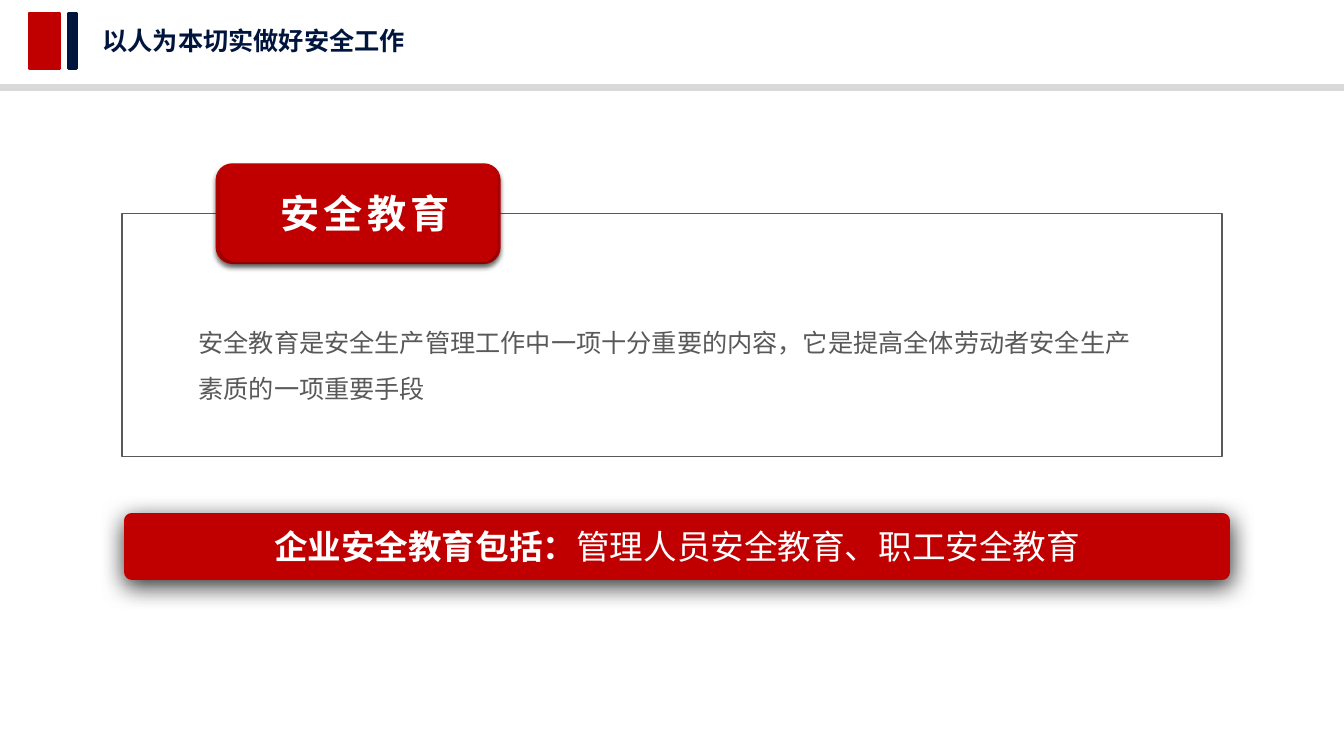
from lxml import etree
from pptx import Presentation
from pptx.dml.color import RGBColor
from pptx.enum.shapes import MSO_SHAPE
from pptx.enum.text import MSO_ANCHOR, PP_ALIGN
from pptx.oxml.ns import qn
from pptx.util import Emu, Pt

RECTANGLE = MSO_SHAPE.RECTANGLE
ROUNDED = MSO_SHAPE.ROUNDED_RECTANGLE
MIDDLE = MSO_ANCHOR.MIDDLE
CENTER = PP_ALIGN.CENTER
FONT = "Noto Sans CJK SC"
RED, NAVY, GRAY, SILVER, WHITE = "C00000", "00153E", "595959", "D9D9D9", "FFFFFF"
WIDTH, HEIGHT = 1334, 750


def px(length):
    """Turn px, at 100 to the inch, into EMU."""
    return Emu(length * 9144)


def color(value):
    """Turn a hex string into a colour."""
    return RGBColor.from_string(value)


def add_block(shapes, box, fill=None, line=None, line_width=1.5, kind=RECTANGLE):
    """Add a preset shape without a shadow."""
    block = shapes.add_shape(kind, *map(px, box))
    block.shadow.inherit = False
    if fill:
        block.fill.solid()
        block.fill.fore_color.rgb = color(fill)
    else:
        block.fill.background()
    if line:
        block.line.color.rgb = color(line)
        block.line.width = Pt(line_width)
    else:
        block.line.fill.background()
    return block


def add_shadow(block, opacity, blur, distance):
    """Cast a black shadow straight down, with lengths in points."""
    effects = block._element.spPr.find(qn("a:effectLst"))
    shadow = etree.SubElement(effects, qn("a:outerShdw"), blurRad=str(Pt(blur)),
                              dist=str(Pt(distance)), dir="5400000", algn="t", rotWithShape="0")
    black = etree.SubElement(shadow, qn("a:srgbClr"), val="000000")
    etree.SubElement(black, qn("a:alpha"), val=str(opacity * 1000))


def add_span(para, text, size, text_color, bold=False, spacing=None):
    """Add a formatted run to a paragraph."""
    span = para.add_run()
    span.text = text
    span.font.name = FONT
    span.font.size = Pt(size)
    span.font.bold = bold
    span.font.color.rgb = color(text_color)
    properties = span._r.get_or_add_rPr()
    etree.SubElement(properties, qn("a:ea"), typeface=FONT)
    if spacing:
        properties.set("spc", str(spacing * 100))


def add_header(page, left, top, width, height):
    """Draw the two marks, the title and the rule below them."""
    for offset, mark_width, fill in ((29, 31, RED), (68, 8, NAVY)):
        add_block(page.shapes, (left + offset, top + 13, mark_width, 55), fill, fill)
    title = page.shapes.add_textbox(*map(px, (left + 92, top + 20, 323, 40)))
    title.text_frame.word_wrap = False
    add_span(title.text_frame.paragraphs[0], "以人为本切实做好安全工作", 18, NAVY, True)
    add_block(page.shapes, (left, top + height - 5, width, 5), SILVER, SILVER)


def add_tab(page, left, top, width, height):
    """Draw the raised label as two stacked rounded plates."""
    tab = page.shapes.add_group_shape()
    base = add_block(tab.shapes, (left, top, width, height), RED, kind=ROUNDED)
    add_shadow(base, 50, 3.5, 2.2)
    face = add_block(tab.shapes, (left + 4, top + 1, width - 7, height - 3), RED, kind=ROUNDED)
    add_shadow(face, 32, 3.5, 2.2)
    frame = face.text_frame
    frame.vertical_anchor = MIDDLE
    frame.paragraphs[0].alignment = CENTER
    add_span(frame.paragraphs[0], " 安全教育", 28, WHITE, True, 3)


def add_panel(page, left, top, width, height):
    """Draw the outlined panel with its text and label."""
    add_block(page.shapes, (left, top, width, height), line=GRAY, line_width=1)
    body = page.shapes.add_textbox(*map(px, (left + 63, top + 91, width - 120, 104)))
    frame = body.text_frame
    frame.word_wrap = True
    frame.margin_left = frame.margin_right = px(13)
    frame.margin_top = frame.margin_bottom = px(7)
    frame.paragraphs[0].line_spacing = 1.5
    add_span(frame.paragraphs[0],
             "安全教育是安全生产管理工作中一项十分重要的内容，它是提高全体劳动者安全生产素质的一项重要手段",
             18, GRAY)
    add_tab(page, left + 93, top - 50, 283, 100)


def add_summary(page, left, top, width, height):
    """Draw the red bar that lists the kinds of education."""
    bar = add_block(page.shapes, (left, top, width, height), RED, RED, 12)
    add_shadow(bar, 80, 17, 4)
    frame = bar.text_frame
    frame.word_wrap = True
    frame.vertical_anchor = MIDDLE
    para = frame.paragraphs[0]
    para.alignment = CENTER
    add_span(para, "企业安全教育包括：", 24, WHITE, True)
    add_span(para, "管理人员安全教育、职工安全教育", 24, WHITE)


def main():
    """Build and save the deck."""
    deck = Presentation()
    deck.slide_width, deck.slide_height = px(WIDTH), px(HEIGHT)
    page = deck.slides.add_slide(deck.slide_layouts[6])
    add_header(page, 0, 0, WIDTH, 89)
    add_panel(page, 121, 212, 1092, 241)
    add_summary(page, 131, 517, 1082, 50)
    deck.save("out.pptx")


if __name__ == "__main__":
    main()
